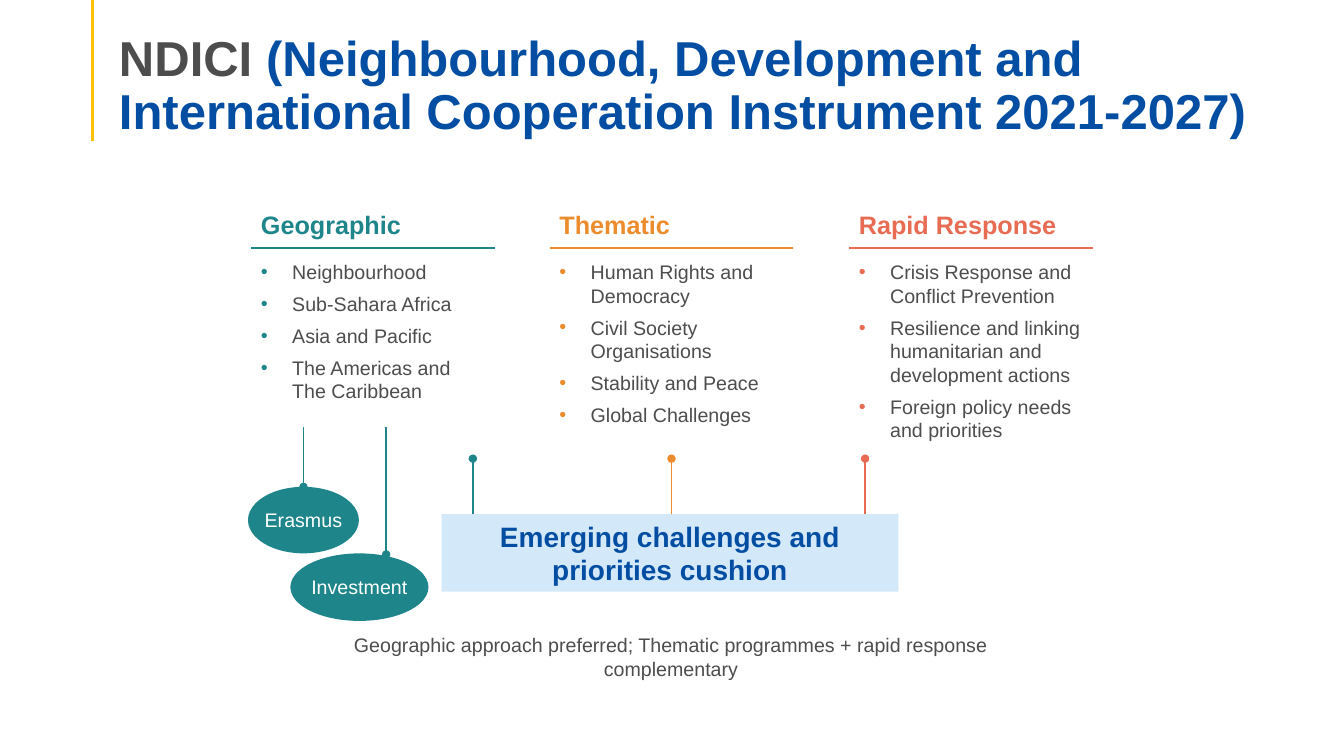
from lxml.etree import SubElement
from pptx import Presentation
from pptx.dml.color import RGBColor
from pptx.enum.shapes import MSO_CONNECTOR, MSO_SHAPE
from pptx.enum.text import MSO_ANCHOR, MSO_AUTO_SIZE, PP_ALIGN
from pptx.oxml.ns import qn
from pptx.util import Pt

PX = 9144  # 100 px to the inch
THEME = {
    "font": "Arial", "grey": "4D4D4D", "blue": "034EA2", "pale": "D3E8F9",
    "gold": "FFC000", "teal": "1E858B", "orange": "EC8C2D", "coral": "E76C53",
    "white": "FFFFFF", "title": 35, "cushion": 20, "heading": 18, "body": 14,
}


def write(shape, paragraphs, size, color, bold=False, align=PP_ALIGN.LEFT,
          anchor=MSO_ANCHOR.TOP, wrap=True, inset=(10, 5, 10, 5), bullet=None):
    """Fill a shape with paragraphs, each a list of (text, color) runs or a string."""
    frame = shape.text_frame
    left, top, right, bottom = (side * PX for side in inset)
    frame_format = {"word_wrap": wrap, "auto_size": MSO_AUTO_SIZE.NONE, "vertical_anchor": anchor,
                    "margin_left": left, "margin_top": top,
                    "margin_right": right, "margin_bottom": bottom}
    for name, value in frame_format.items():
        setattr(frame, name, value)
    for index, content in enumerate(paragraphs):
        paragraph = frame.add_paragraph() if index else frame.paragraphs[0]
        paragraph.alignment = align
        if bullet:
            properties = paragraph._p.get_or_add_pPr()
            properties.set("marL", str(31 * PX))
            properties.set("indent", str(-31 * PX))
            bullet_color = SubElement(properties, qn("a:buClr"))
            SubElement(bullet_color, qn("a:srgbClr"), val=THEME[bullet])
            SubElement(properties, qn("a:buFont"), typeface=THEME["font"])
            SubElement(properties, qn("a:buChar"), char="•")
            paragraph.space_before = Pt(6 if index else 0)
        for text, run_color in [(content, color)] if isinstance(content, str) else content:
            run = paragraph.add_run()
            run.text = text
            for name, value in {"name": THEME["font"], "size": Pt(THEME[size]), "bold": bold}.items():
                setattr(run.font, name, value)
            run.font.color.rgb = RGBColor.from_string(THEME[run_color])


def draw_line(x1, y1, x2, y2, color, width, dot=False):
    line = slide.shapes.add_connector(MSO_CONNECTOR.STRAIGHT, x1 * PX, y1 * PX, x2 * PX, y2 * PX)
    line.line.color.rgb = RGBColor.from_string(THEME[color])
    line.line.width = Pt(width)
    if dot:
        SubElement(line.line._get_or_add_ln(), qn("a:tailEnd"), type="oval")
    SubElement(line._element.spPr, qn("a:effectLst"))


presentation = Presentation()
presentation.slide_width, presentation.slide_height = 1333 * PX, 750 * PX
slide = presentation.slides.add_slide(presentation.slide_layouts[5])

# Title with its gold rule
draw_line(92, 0, 92, 140, "gold", 2.25)
title = slide.shapes.title
for name, value in {"left": 108, "top": 47, "width": 1183, "height": 92}.items():
    setattr(title, name, value * PX)
write(title, [[("NDICI", "grey"),
               (" (Neighbourhood, Development and International Cooperation Instrument 2021-2027)", "blue")]],
      "title", "blue", bold=True, anchor=MSO_ANCHOR.BOTTOM, inset=(10, 5, 10, 0))
title.text_frame.paragraphs[0].line_spacing = 0.9

# Three pillars: heading, rule, bullet list
pillars = [
    ("Geographic", "teal", 153,
     ["Neighbourhood", "Sub-Sahara Africa", "Asia and Pacific", "The Americas and The Caribbean"]),
    ("Thematic", "orange", 177,
     ["Human Rights and Democracy", "Civil Society Organisations", "Stability and Peace",
      "Global Challenges"]),
    ("Rapid Response", "coral", 192,
     ["Crisis Response and Conflict Prevention",
      "Resilience and linking humanitarian and development actions",
      "Foreign policy needs and priorities"]),
]
PILLAR_WIDTH = 242
for index, (heading, color, list_height, items) in enumerate(pillars):
    left = 249 + round(index * 296.5)
    draw_line(left + PILLAR_WIDTH, 246, left, 246, color, 1.5)
    heading_box = slide.shapes.add_textbox(left * PX, 203 * PX, PILLAR_WIDTH * PX, 40 * PX)
    write(heading_box, [heading], "heading", color, bold=True)
    list_box = slide.shapes.add_textbox(left * PX, 253 * PX, PILLAR_WIDTH * PX, list_height * PX)
    write(list_box, items, "body", "grey", bullet=color)

# Cushion bar and ovals
blocks = [
    (MSO_SHAPE.RECTANGLE, 438, 510, 453, 77, "pale",
     "Emerging challenges and priorities cushion", "cushion", "blue", True, 15),
    (MSO_SHAPE.OVAL, 246, 483, 110, 66, "teal", "Erasmus", "body", "white", False, 0),
    (MSO_SHAPE.OVAL, 288, 549, 137, 67, "teal", "Investment", "body", "white", False, 0),
]
for kind, left, top, width, height, fill, text, size, color, bold, margin in blocks:
    block = slide.shapes.add_shape(kind, left * PX, top * PX, width * PX, height * PX)
    block.shadow.inherit = False
    block.fill.solid()
    block.fill.fore_color.rgb = RGBColor.from_string(THEME[fill])
    block.line.fill.background()
    write(block, [text], size, color, bold=bold, align=PP_ALIGN.CENTER, anchor=MSO_ANCHOR.MIDDLE,
          wrap=bold, inset=(margin, 0, margin, 0))

# Dotted links from the pillars
links = [(666, 510, 455, "orange"), (469, 510, 455, "teal"), (858, 510, 455, "coral"),
         (383, 424, 550, "teal"), (301, 424, 483, "teal")]
for x, start, end, color in links:
    draw_line(x, start, x, end, color, 1, dot=True)

# Closing remark
remark = slide.shapes.add_textbox(272 * PX, 623 * PX, 787 * PX, 36 * PX)
write(remark, ["Geographic approach preferred; Thematic programmes + rapid response complementary"],
      "body", "grey", align=PP_ALIGN.CENTER, inset=(15, 5, 15, 5))

presentation.save("out.pptx")
